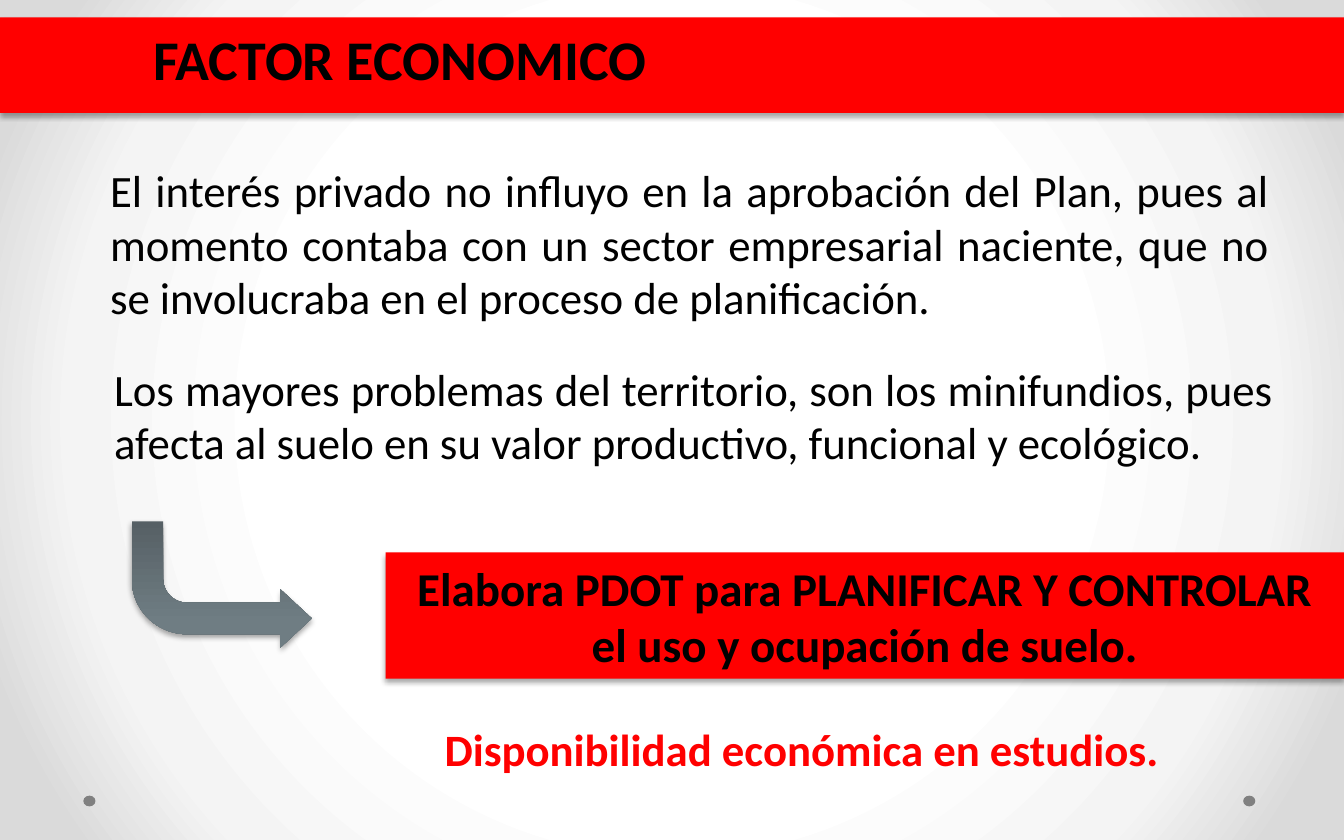
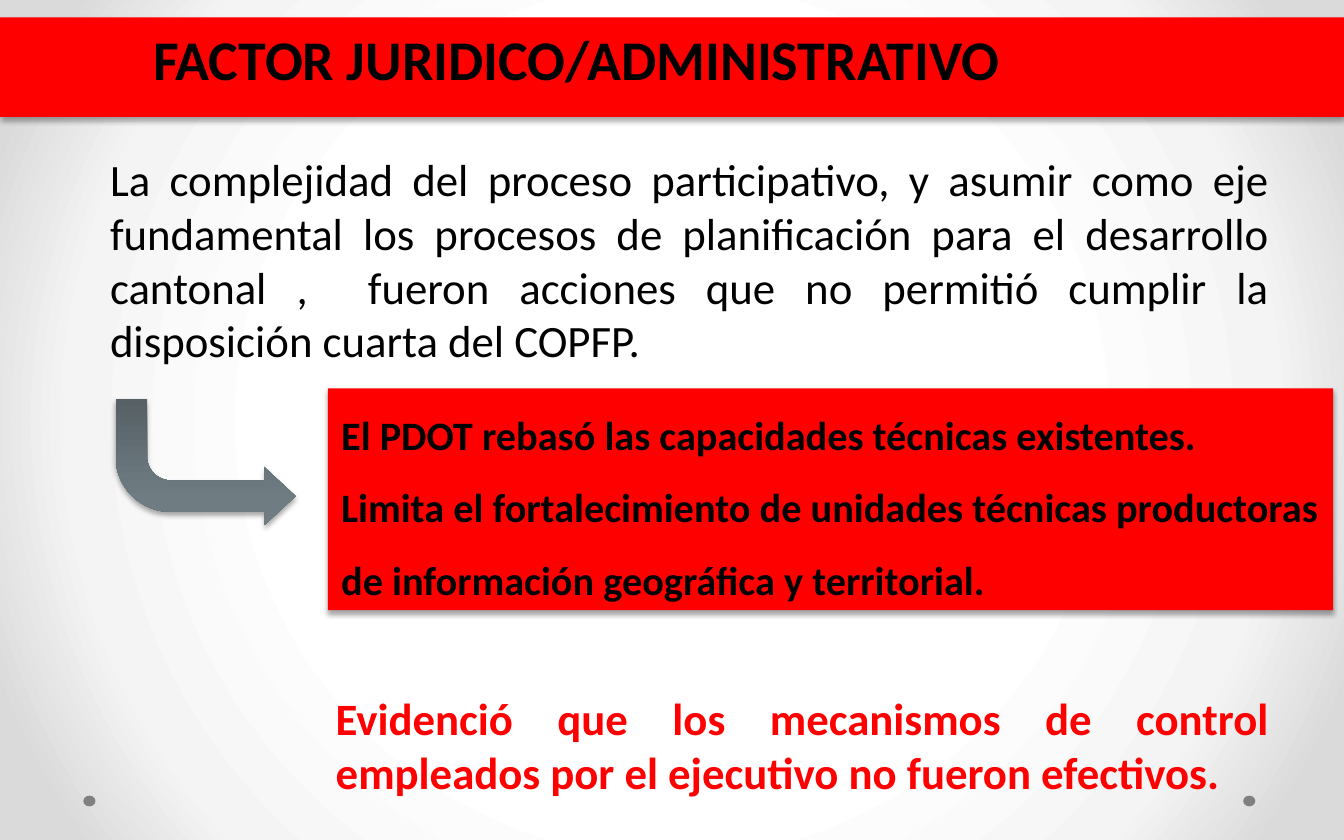
from collections import namedtuple

from lxml.etree import SubElement
from pptx import Presentation
from pptx.dml.color import RGBColor
from pptx.enum.shapes import MSO_SHAPE as Shape
from pptx.enum.text import MSO_ANCHOR as Anchor, PP_ALIGN as Align
from pptx.oxml.ns import qn
from pptx.util import Inches, Pt

RED = RGBColor(0xFF, 0x00, 0x00)
BLACK = RGBColor(0x00, 0x00, 0x00)
GREY = RGBColor(0x80, 0x80, 0x80)
WHITE = RGBColor(0xFF, 0xFF, 0xFF)
PALE = RGBColor(0xF4, 0xF4, 0xF4)
SILVER = RGBColor(0xDA, 0xDA, 0xDA)
SLATE = RGBColor(0x56, 0x60, 0x65)
STEEL = RGBColor(0x6F, 0x7D, 0x83)
MIST = RGBColor(0x6F, 0x7E, 0x84)

# The slide is a grid of 40 columns and 25 rows.
WIDTH, HEIGHT = Inches(10), Inches(6.25)
COL, ROW = WIDTH / 40, HEIGHT / 25
Box = namedtuple("Box", "x y w h")

FONT = "Calibri"
BODY = dict(size=Pt(24), color=BLACK, bold=False)
NOTE = dict(size=Pt(24), color=RED, bold=True)
HEAD = dict(size=Pt(30), color=BLACK, bold=True)


def place(box):
    return [round(n) for n in (box.x * COL, box.y * ROW, box.w * COL, box.h * ROW)]


def node(parent, tag, **attrs):
    return SubElement(parent, qn(tag), {k: str(v) for k, v in attrs.items()})


def blend(fill, owner, stops):
    """Turn the fill into a gradient with these stops, and return its node."""
    fill.gradient()
    grad = next(owner.iter(qn("a:gradFill")))
    for child in list(grad):
        grad.remove(child)
    grad.set("rotWithShape", "1")
    row = node(grad, "a:gsLst")
    for share, color in stops:
        stop = node(row, "a:gs", pos=share * 1000)
        node(stop, "a:srgbClr", val=color)
    return grad


def shade(shape):
    """Give the shape a soft shadow below it."""
    shape.shadow.inherit = False
    effects = shape._element.spPr.find(qn("a:effectLst"))
    cast = node(effects, "a:outerShdw", blurRad=Pt(3.1), dist=Pt(1.8),
                dir=90 * 60000, rotWithShape=0)
    node(node(cast, "a:srgbClr", val=BLACK), "a:alpha", val=35000)


def write(shape, text, size, color, bold, align=Align.JUSTIFY,
          anchor=Anchor.TOP, spacing=None, inset=Inches(0.1)):
    frame = shape.text_frame
    for key, value in dict(word_wrap=True, vertical_anchor=anchor,
                           margin_left=inset).items():
        setattr(frame, key, value)
    para = frame.paragraphs[0]
    para.text = text
    para.alignment = align
    para.line_spacing = spacing
    for run in para.runs:
        for key, value in dict(name=FONT, size=size, bold=bold).items():
            setattr(run.font, key, value)
        run.font.color.rgb = color


def prose(slide, box, text, **style):
    write(slide.shapes.add_textbox(*place(box)), text, **style)


def solid(slide, kind, box, color):
    shape = slide.shapes.add_shape(kind, *place(box))
    shape.fill.solid()
    shape.fill.fore_color.rgb = color
    shape.line.fill.background()
    shape.shadow.inherit = False
    return shape


def panel(slide, box, text, **style):
    """A red block with a shadow and text."""
    shape = solid(slide, Shape.RECTANGLE, box, RED)
    shade(shape)
    write(shape, text, **style)


def arrow(slide, x, y):
    shape = solid(slide, Shape.BENT_ARROW, Box(x, y, 5.36, 3.76), STEEL)
    for i, value in enumerate((0.25, 0.232, 0.25, 0.438)):
        shape.adjustments[i] = value
    props = shape._element.spPr
    props.find(qn("a:xfrm")).set("flipV", "1")
    grad = blend(shape.fill, props, [(0, SLATE), (80, STEEL), (100, MIST)])
    node(grad, "a:lin", ang=270 * 60000, scaled=0)
    shade(shape)


def backdrop(master):
    grad = blend(master.background.fill, master.element,
                 [(50, WHITE), (76, PALE), (92, SILVER)])
    node(node(grad, "a:path", path="circle"), "a:fillToRect",
         l=50000, t=50000, r=50000, b=50000)


def factor(deck, title, depth):
    """A new slide with its dots and a title band of this many rows."""
    slide = deck.slides.add_slide(deck.slide_layouts[6])
    for x in (37, 2.48):
        solid(slide, Shape.OVAL, Box(x, 23.68, 0.36, 0.32), GREY)
    panel(slide, Box(0, 0.52, 40, depth), title, inset=Inches(1.14), **HEAD)
    return slide


def economy(deck):
    slide = factor(deck, "FACTOR ECONOMICO", 2.84)
    prose(slide, Box(2.88, 4.64, 35.28, 6),
          "El interés privado no influyo en la aprobación del Plan, pues al momento "
          "contaba con un sector empresarial naciente, que no se involucraba en el "
          "proceso de planificación.", **BODY)
    prose(slide, Box(3, 10.56, 35.28, 6),
          "Los mayores problemas del territorio, son los minifundios, pues afecta al "
          "suelo en su valor productivo, funcional y ecológico.", **BODY)
    arrow(slide, 3.92, 15.52)
    panel(slide, Box(11.48, 16.44, 28.52, 3.76),
          "Elabora PDOT para PLANIFICAR Y CONTROLAR el uso y ocupación de suelo.",
          size=Pt(25.2), color=BLACK, bold=True, align=Align.CENTER,
          anchor=Anchor.BOTTOM)
    prose(slide, Box(12.84, 20.24, 22.52, 4.08),
          "Disponibilidad económica en estudios.", anchor=Anchor.MIDDLE, **NOTE)


def law(deck):
    slide = factor(deck, "FACTOR JURIDICO/ADMINISTRATIVO", 2.96)
    prose(slide, Box(2.88, 4.32, 35.28, 6.44),
          "La complejidad del proceso participativo, y asumir como eje fundamental "
          "los procesos de planificación para el desarrollo cantonal ,  fueron "
          "acciones que no permitió cumplir la disposición cuarta del COPFP.", **BODY)
    arrow(slide, 3.44, 11.88)
    panel(slide, Box(9.76, 11.56, 29.92, 6.6),
          "El PDOT rebasó las capacidades técnicas existentes.\n"
          "Limita el fortalecimiento de unidades técnicas productoras de información "
          "geográfica y territorial.",
          size=Pt(21.6), color=BLACK, bold=True, align=Align.LEFT,
          anchor=Anchor.BOTTOM, spacing=1.5)
    prose(slide, Box(9.6, 20.36, 28.56, 4.4),
          "Evidenció que los mecanismos de control empleados por el ejecutivo no "
          "fueron efectivos.", **NOTE)


def main():
    deck = Presentation()
    deck.slide_width, deck.slide_height = WIDTH, HEIGHT
    backdrop(deck.slide_master)
    economy(deck)
    law(deck)
    deck.save("out.pptx")


if __name__ == "__main__":
    main()
